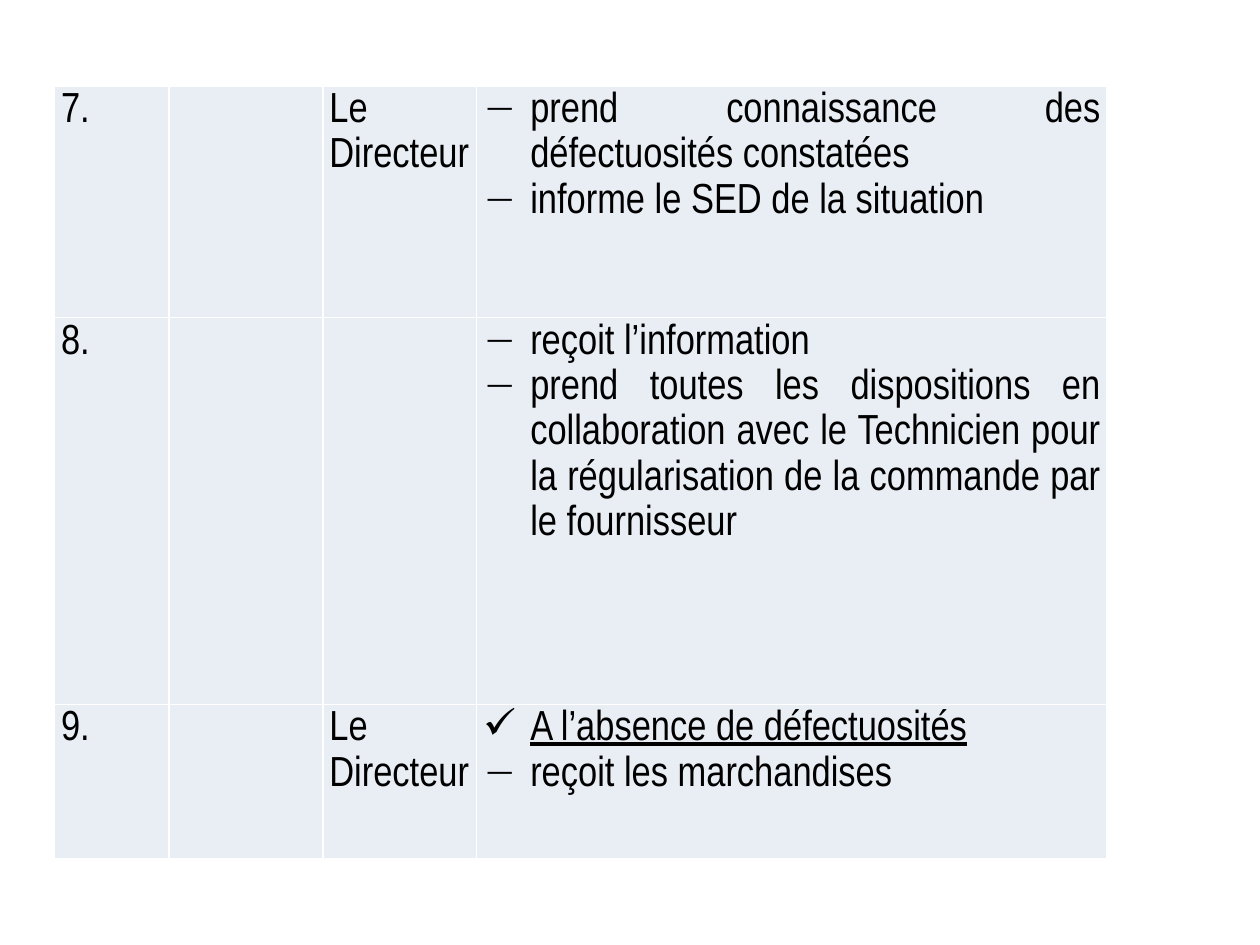
from dataclasses import dataclass

from lxml.etree import SubElement
from pptx import Presentation
from pptx.dml.color import RGBColor
from pptx.enum.text import PP_ALIGN
from pptx.oxml import parse_xml
from pptx.oxml.ns import nsdecls, qn
from pptx.table import _Cell
from pptx.util import Cm, Pt

COLORS = {"text": "000000", "cell": "E9EDF4", "border": "FFFFFF"}
FONT = "Arial Narrow"
COLUMN_WIDTHS = (2.31, 3.1, 3.1, 12.7)
HANGING = Cm(0.95)


@dataclass
class Line:
    text: str
    bullet: str = ""
    underline: bool = False
    space_before: int = 0


@dataclass
class Step:
    number: str
    actor: str
    actions: list[Line]
    height: float


STEPS = [
    Step("7.", "Le Directeur", [
        Line("prend connaissance des défectuosités constatées", "−"),
        Line("informe le SED de la situation", "−"),
    ], 4.67),
    Step("8.", "", [
        Line("reçoit l’information", "−"),
        Line("prend toutes les dispositions en collaboration avec le Technicien "
             "pour la régularisation de la commande par le fournisseur", "−"),
    ], 7.8),
    Step("9.", "Le Directeur", [
        Line("A l’absence de défectuosités", "✓", underline=True),
        Line("reçoit les marchandises", "−"),
    ], 3.12),
]


def style_cell(cell: _Cell) -> None:
    """Set the margins, fill and thin borders of a cell."""
    cell.margin_left = cell.margin_right = Cm(0.13)
    cell.margin_top = cell.margin_bottom = 0
    cell.fill.solid()
    cell.fill.fore_color.rgb = RGBColor.from_string(COLORS["cell"])
    properties = cell._tc.get_or_add_tcPr()
    for index, side in enumerate(("lnL", "lnR", "lnT", "lnB")):
        properties.insert(index, parse_xml(
            f'<a:{side} {nsdecls("a")} w="{Pt(1)}"><a:solidFill>'
            f'<a:srgbClr val="{COLORS["border"]}"/></a:solidFill></a:{side}>'))


def write_lines(cell: _Cell, lines: list[Line]) -> None:
    """Write one formatted paragraph for each line."""
    frame = cell.text_frame
    frame.text = "\n".join(line.text for line in lines)
    for para, line in zip(frame.paragraphs, lines):
        para.alignment = PP_ALIGN.JUSTIFY
        para.line_spacing = 1.15
        para.space_before = Pt(line.space_before)
        if line.bullet:
            properties = para._p.get_or_add_pPr()
            properties.set("marL", str(HANGING))
            properties.set("indent", str(-HANGING))
            SubElement(properties, qn("a:buChar")).set("char", line.bullet)
        for span in para.runs:
            span.font.name = FONT
            span.font.size = Pt(24)
            span.font.underline = line.underline
            span.font.color.rgb = RGBColor.from_string(COLORS["text"])


def main() -> None:
    deck = Presentation()
    deck.slide_width, deck.slide_height = Cm(25.4), Cm(19.05)
    page = deck.slides.add_slide(deck.slide_layouts[6])

    # Table of procedure steps
    table = page.shapes.add_table(
        len(STEPS), len(COLUMN_WIDTHS), Cm(1.1), Cm(1.73),
        Cm(sum(COLUMN_WIDTHS)), Cm(sum(step.height for step in STEPS))).table
    table.first_row = table.horz_banding = False
    for column, width in zip(table.columns, COLUMN_WIDTHS):
        column.width = Cm(width)
    for cell in table.iter_cells():
        style_cell(cell)

    # Number, actor and actions of each step
    for index, (row, step) in enumerate(zip(table.rows, STEPS)):
        row.height = Cm(step.height)
        write_lines(table.cell(index, 0), [Line(step.number, space_before=6)])
        if step.actor:
            write_lines(table.cell(index, 2), [Line(step.actor)])
        write_lines(table.cell(index, 3), step.actions)

    deck.save("out.pptx")


if __name__ == "__main__":
    main()
